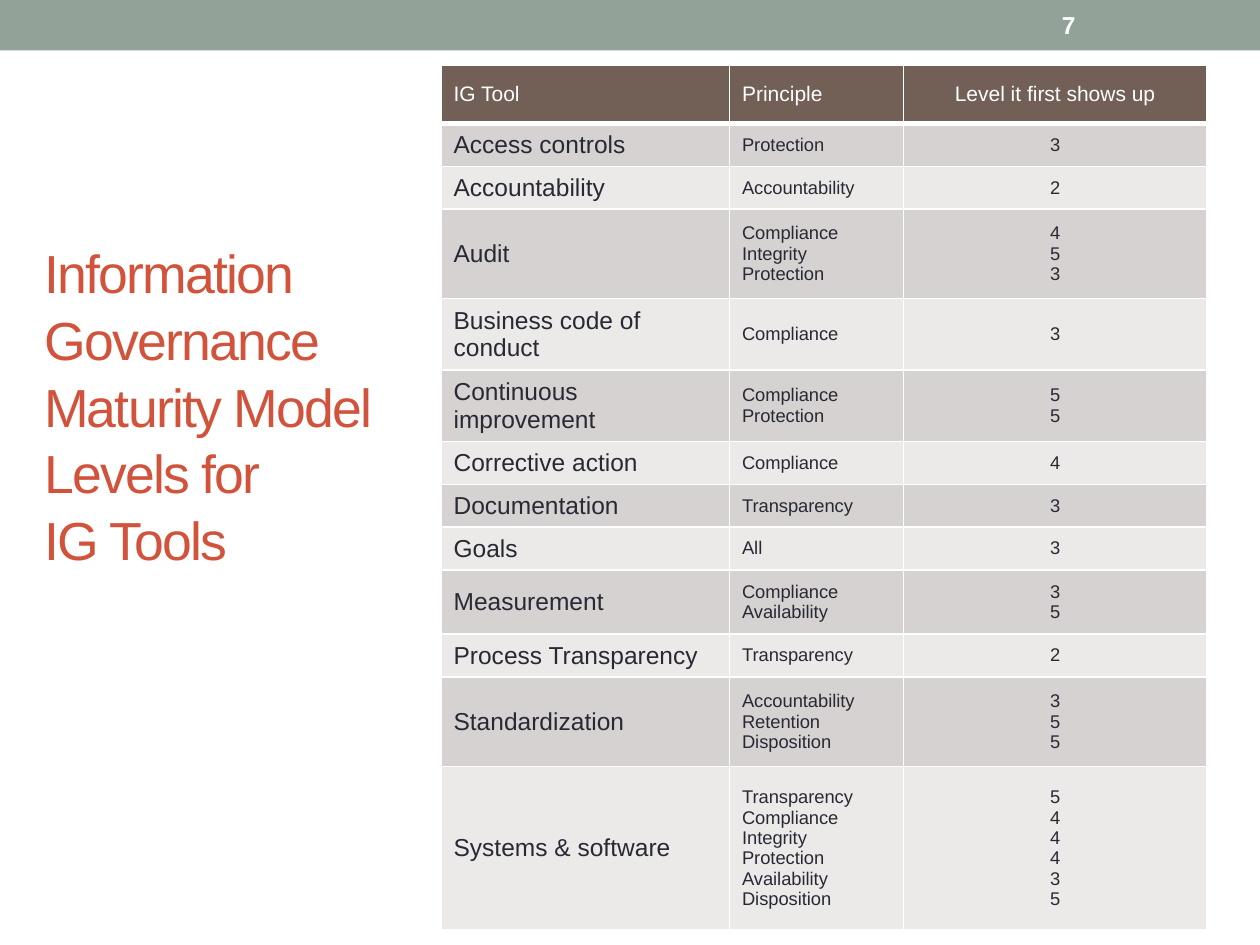
from lxml.etree import SubElement
from pptx import Presentation
from pptx.dml.color import RGBColor
from pptx.enum.shapes import MSO_SHAPE
from pptx.enum.text import MSO_ANCHOR, PP_ALIGN
from pptx.oxml.ns import qn
from pptx.util import Inches, Pt

COLORS = {
    "band": "93A299",
    "title": "D2533C",
    "header": "726056",
    "dark_row": "D5D2D1",
    "light_row": "EBEAE9",
    "text": "292934",
    "white": "FFFFFF",
}
HEADINGS = ["IG Tool", "Principle", "Level it first shows up"]
TOOLS = [
    ("Access controls", 0.34, [("Protection", 3)]),
    ("Accountability", 0.34, [("Accountability", 2)]),
    ("Audit", 0.71, [("Compliance", 4), ("Integrity", 5), ("Protection", 3)]),
    ("Business code of conduct", 0.51, [("Compliance", 3)]),
    ("Continuous improvement", 0.51, [("Compliance", 5), ("Protection", 5)]),
    ("Corrective action", 0.34, [("Compliance", 4)]),
    ("Documentation", 0.34, [("Transparency", 3)]),
    ("Goals", 0.34, [("All", 3)]),
    ("Measurement", 0.51, [("Compliance", 3), ("Availability", 5)]),
    ("Process Transparency", 0.34, [("Transparency", 2)]),
    ("Standardization", 0.71,
     [("Accountability", 3), ("Retention", 5), ("Disposition", 5)]),
    ("Systems & software", 1.3,
     [("Transparency", 5), ("Compliance", 4), ("Integrity", 4),
      ("Protection", 4), ("Availability", 3), ("Disposition", 5)]),
]


def format_text(frame, size, color, align=PP_ALIGN.LEFT, bold=False):
    for para in frame.paragraphs:
        para.alignment = align
        for span in para.runs:
            span.font.name = "Arial"
            span.font.size = Pt(size)
            span.font.bold = bold
            span.font.color.rgb = RGBColor.from_string(COLORS[color])


def style_cell(cell, fill, bottom_width):
    cell.vertical_anchor = MSO_ANCHOR.MIDDLE
    properties = cell._tc.get_or_add_tcPr()
    for side, width in [("L", 1), ("R", 1), ("T", 1), ("B", bottom_width)]:
        border = SubElement(properties, qn(f"a:ln{side}"), w=str(Pt(width)))
        line_fill = SubElement(border, qn("a:solidFill"))
        SubElement(line_fill, qn("a:srgbClr"), val=COLORS["white"])
    cell.fill.solid()
    cell.fill.fore_color.rgb = RGBColor.from_string(COLORS[fill])


deck = Presentation()
deck.slide_width = Inches(10)
deck.slide_height = Inches(7.5)
page = deck.slides.add_slide(deck.slide_layouts[5])

band = page.shapes.add_shape(
    MSO_SHAPE.RECTANGLE, Inches(0), Inches(0), Inches(10), Inches(0.4))
band.shadow.inherit = False
band.fill.solid()
band.fill.fore_color.rgb = RGBColor.from_string(COLORS["band"])
band.line.fill.background()

title = page.shapes.title
title.left, title.top = Inches(0.25), Inches(1.92)
title.width, title.height = Inches(3.44), Inches(2.58)
title.text_frame.text = "Information Governance Maturity Model Levels for \vIG Tools"
title.text_frame.word_wrap = True
title.text_frame.vertical_anchor = MSO_ANCHOR.MIDDLE
title.text_frame.paragraphs[0].line_spacing = 1.04
format_text(title.text_frame, 30.6, "title")
for span in title.text_frame.paragraphs[0].runs:
    span.font._element.set("spc", "-100")

number_box = page.shapes.add_textbox(
    Inches(8.33), Inches(0.02), Inches(1.17), Inches(0.36))
number_box.text_frame.text = "7"
number_box.text_frame.word_wrap = True
number_box.text_frame.vertical_anchor = MSO_ANCHOR.MIDDLE
format_text(number_box.text_frame, 14, "white", bold=True)

table = page.shapes.add_table(
    len(TOOLS) + 1, len(HEADINGS),
    Inches(3.5), Inches(0.52), Inches(6.08), Inches(6.87)).table
for column, width in zip(table.columns, [2.29, 1.38, 2.41]):
    column.width = Inches(width)

aligns = [PP_ALIGN.LEFT, PP_ALIGN.LEFT, PP_ALIGN.CENTER]
table.rows[0].height = Inches(0.46)
for cell, heading, align in zip(table.rows[0].cells, HEADINGS, aligns):
    cell.text_frame.text = heading
    format_text(cell.text_frame, 12, "white", align)
    style_cell(cell, "header", 3)

for index, (tool, height, levels) in enumerate(TOOLS, start=1):
    row = table.rows[index]
    row.height = Inches(height)
    principles = "\n".join(principle for principle, level in levels)
    numbers = "\n".join(str(level) for principle, level in levels)
    fill = "dark_row" if index % 2 else "light_row"
    texts = [tool, principles, numbers]
    for cell, text, size, align in zip(row.cells, texts, [14, 10.5, 10.5], aligns):
        cell.text_frame.text = text
        format_text(cell.text_frame, size, "text", align)
        style_cell(cell, fill, 1)

deck.save("out.pptx")
